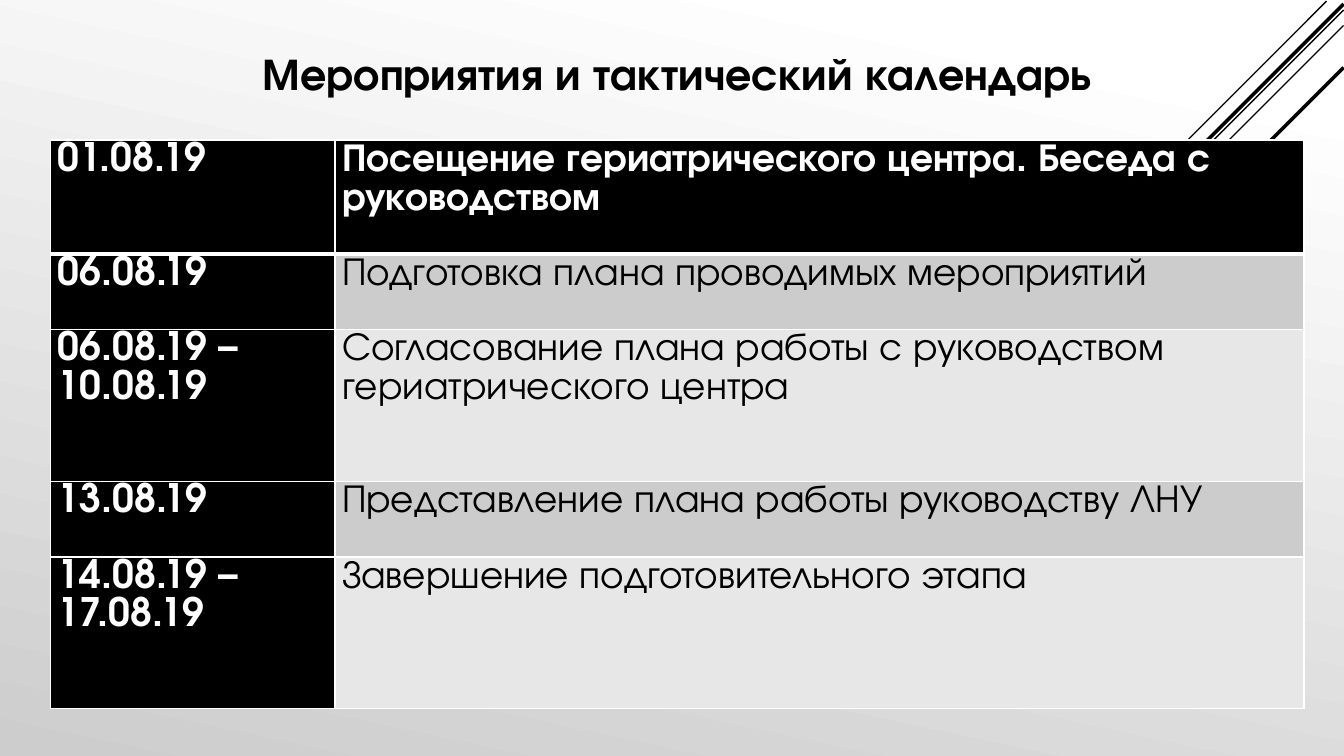
import pptx
import pptx.util
import pptx.dml.color
import pptx.enum.shapes
import pptx.enum.text
from lxml import etree
from pptx.util import Cm, Pt

FONT = "TeX Gyre Adventor"
COLORS = {"black": "000000", "white": "FFFFFF", "dark_band": "CCCCCC",
          "light_band": "E7E7E7", "backdrop_end": "CDCDCD"}

TITLE = "Мероприятия и тактический календарь"
# date, event, height in row units
EVENTS = [
    ("01.08.19", "Посещение гериатрического центра. Беседа с руководством", 1.5),
    ("06.08.19", "Подготовка плана проводимых мероприятий", 1),
    ("06.08.19 – 10.08.19", "Согласование плана работы с руководством гериатрического центра", 2),
    ("13.08.19", "Представление плана работы руководству ЛНУ", 1),
    ("14.08.19 – 17.08.19", "Завершение подготовительного этапа", 2),
]
ROW_UNIT = 1.91
COLUMN_WIDTHS = [7.17, 24.42]
TABLE_LEFT, TABLE_TOP = 1.27, 3.53

# diagonals at 45 degrees: right end x, top y, run to the lower left, weight
DIAGONALS = [
    (33.43, 0.03, 10.57, 1),
    (33.86, 0.25, 16.89, 1),
    (33.86, 0.64, 13.77, 1),
    (33.86, 0.1, 13.47, 2.5),
    (33.86, 1.7, 12.06, 2.5),
]


def rgb(name):
    return pptx.dml.color.RGBColor.from_string(COLORS[name])


def write(frame, text, size, color="black", bold=False, align=None, spacing=None):
    para = frame.paragraphs[0]
    para.alignment = align
    para.line_spacing = spacing
    span = para.add_run()
    span.text = text
    span.font.name, span.font.size, span.font.bold = FONT, Pt(size), bold
    span.font.color.rgb = rgb(color)


def add_element(parent, tag, **attributes):
    return etree.SubElement(parent, pptx.oxml.ns.qn(tag), attributes)


def set_borders(cell, weights):
    """Draw white borders; weights maps a side (L, R, T, B) to points."""
    properties = cell._tc.get_or_add_tcPr()
    for position, (side, weight) in enumerate(weights.items()):
        border = etree.Element(pptx.oxml.ns.qn(f"a:ln{side}"), w=str(Pt(weight)))
        fill = add_element(border, "a:solidFill")
        add_element(fill, "a:srgbClr", val=COLORS["white"])
        properties.insert(position, border)


def paint_background(page):
    fill = page.background.fill
    fill.gradient()
    fill.gradient_angle = 258
    stops = [(0.1, "white"), (1, "backdrop_end")]
    for stop, (position, color) in zip(fill.gradient_stops, stops):
        stop.position = position
        stop.color.rgb = rgb(color)


def add_diagonals(page):
    for right, top, run, weight in DIAGONALS:
        line = page.shapes.add_connector(
            pptx.enum.shapes.MSO_CONNECTOR.STRAIGHT,
            Cm(right), Cm(top), Cm(right - run), Cm(top + run))
        line.line.color.rgb = rgb("black")
        line.line.width = Pt(weight)
        add_element(line._element.spPr, "a:effectLst")


def add_title(page):
    title = page.shapes.title
    title.left, title.top, title.width, title.height = Cm(5.28), Cm(1.02), Cm(23.6), Cm(1.62)
    frame = title.text_frame
    frame.word_wrap = False
    frame.auto_size = pptx.enum.text.MSO_AUTO_SIZE.SHAPE_TO_FIT_TEXT
    write(frame, TITLE, 32, bold=True, align=pptx.enum.text.PP_ALIGN.CENTER)


def add_calendar(page):
    heights = [units * ROW_UNIT for *_, units in EVENTS]
    table = page.shapes.add_table(
        len(EVENTS), len(COLUMN_WIDTHS), Cm(TABLE_LEFT), Cm(TABLE_TOP),
        Cm(sum(COLUMN_WIDTHS)), Cm(sum(heights))).table
    table.first_row = table.horz_banding = False
    for column, width in zip(table.columns, COLUMN_WIDTHS):
        column.width = Cm(width)
    for row, (*texts, _) in enumerate(EVENTS):
        table.rows[row].height = Cm(heights[row])
        band = "dark_band" if row % 2 else "light_band"
        for column, text in enumerate(texts):
            heading = row == 0 or column == 0
            cell = table.cell(row, column)
            cell.margin_left = cell.margin_right = Cm(0.18)
            cell.margin_top = cell.margin_bottom = 0
            cell.fill.solid()
            cell.fill.fore_color.rgb = rgb("black" if heading else band)
            set_borders(cell, {"L": 1, "R": 1, "T": 3 if row == 1 else 1,
                               "B": 3 if row == 0 else 1})
            write(cell.text_frame, text, 28, "white" if heading else "black",
                  bold=heading, spacing=1.07)


def main():
    deck = pptx.Presentation()
    deck.slide_width, deck.slide_height = Cm(33.87), Cm(19.05)
    page = deck.slides.add_slide(deck.slide_layouts.get_by_name("Title Only"))
    paint_background(page)
    add_diagonals(page)
    add_title(page)
    add_calendar(page)
    deck.save("out.pptx")


if __name__ == "__main__":
    main()
